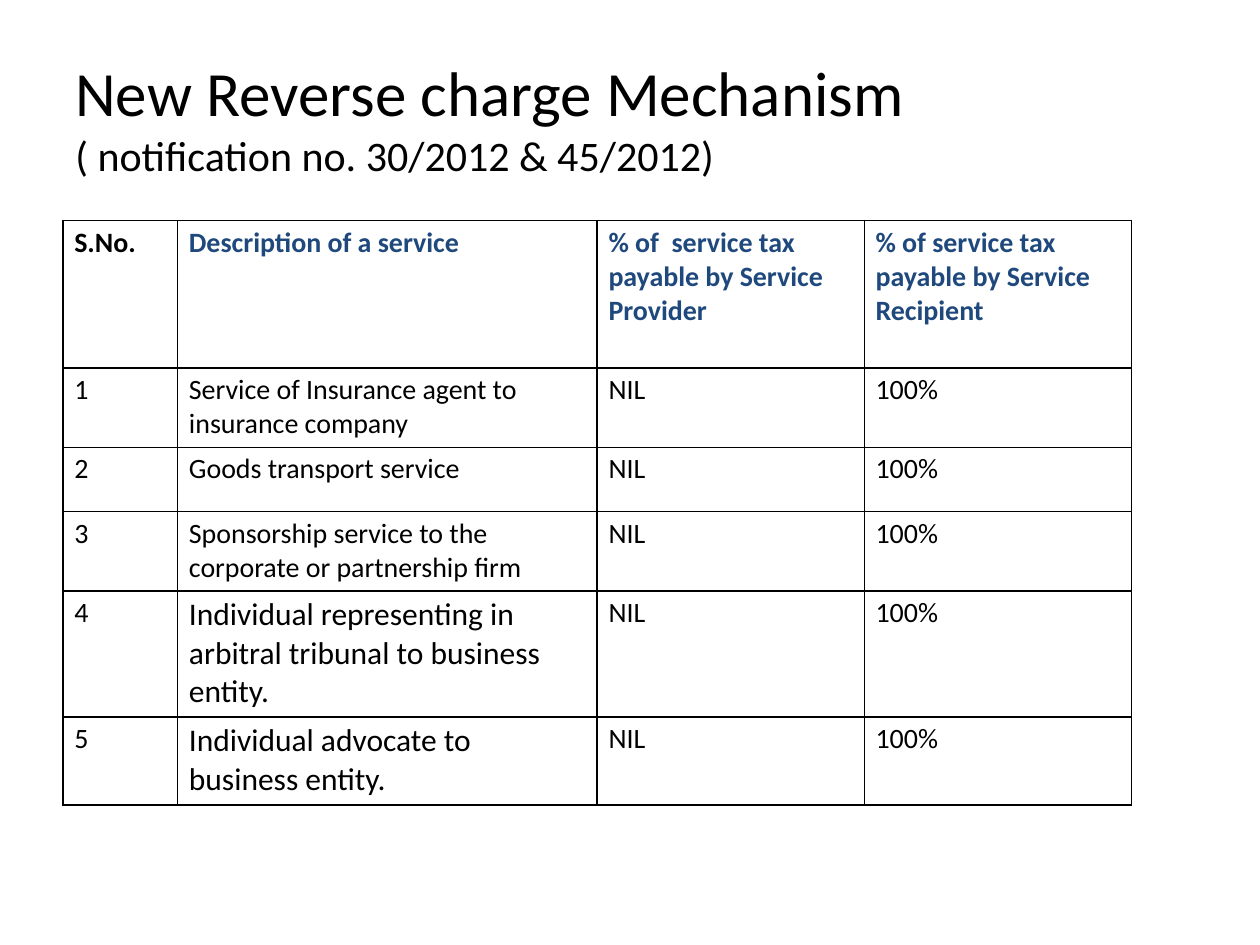
from dataclasses import dataclass

from lxml.etree import SubElement
from pptx import Presentation
from pptx.dml.color import RGBColor
from pptx.enum.text import MSO_ANCHOR as Anchor
from pptx.oxml.ns import qn
from pptx.util import Inches, Pt


@dataclass(frozen=True)
class Theme:
    font: str = "Calibri"
    ink: str = "000000"
    accent: str = "1F497D"
    title: int = 36
    subtitle: int = 24
    body: int = 16
    large: int = 18
    border: float = 1


@dataclass(frozen=True)
class Service:
    description: str
    size: int
    provider: str = "NIL"
    recipient: str = "100%"


THEME = Theme()
HEADERS = (
    "S.No.",
    "Description of a service",
    "% of  service tax payable by Service Provider",
    "% of service tax payable by Service Recipient",
)
SERVICES = (
    Service("Service of Insurance agent to insurance company", THEME.body),
    Service("Goods transport service", THEME.body),
    Service("Sponsorship service to the corporate or partnership firm", THEME.body),
    Service("Individual representing in arbitral tribunal to business entity.", THEME.large),
    Service("Individual advocate to business entity.", THEME.large),
)
COLUMN_WIDTHS = (0.91, 3.33, 2.12, 2.12)
ROW_HEIGHTS = (1.17, 0.63, 0.51, 0.63, 1, 0.7)


def add_text(para, text: str, *, size: int = THEME.body,
             color: str = THEME.ink, bold: bool = False) -> None:
    span = para.add_run()
    span.text = text
    span.font.name = THEME.font
    span.font.size = Pt(size)
    span.font.bold = bold
    span.font.color.rgb = RGBColor.from_string(color)


def add_borders(cell) -> None:
    properties = cell._tc.get_or_add_tcPr()
    for side in ("lnL", "lnR", "lnT", "lnB"):
        line = SubElement(properties, qn(f"a:{side}"), w=str(Pt(THEME.border)))
        fill = SubElement(line, qn("a:solidFill"))
        SubElement(fill, qn("a:srgbClr"), val=THEME.ink)


def fill_cell(cell, text: str, **text_format) -> None:
    add_borders(cell)
    cell.fill.background()
    cell.margin_left = cell.margin_right = Inches(0.09)
    cell.margin_top = cell.margin_bottom = Inches(0.04)
    cell.vertical_anchor = Anchor.TOP
    add_text(cell.text_frame.paragraphs[0], text, **text_format)


def add_title(page) -> None:
    box = page.shapes.add_textbox(Inches(0.5), Inches(0.3), Inches(9), Inches(1.25))
    frame = box.text_frame
    frame.word_wrap = True
    frame.vertical_anchor = Anchor.MIDDLE
    para = frame.paragraphs[0]
    add_text(para, "New Reverse charge Mechanism", size=THEME.title)
    para.add_line_break()
    add_text(para, "( notification no. 30/2012 & 45/2012)", size=THEME.subtitle)


def add_service_table(page) -> None:
    table = page.shapes.add_table(
        len(ROW_HEIGHTS), len(COLUMN_WIDTHS), Inches(0.5), Inches(1.75),
        Inches(sum(COLUMN_WIDTHS)), Inches(sum(ROW_HEIGHTS))).table
    table.first_row = table.horz_banding = False
    for column, width in zip(table.columns, COLUMN_WIDTHS):
        column.width = Inches(width)
    for row, height in zip(table.rows, ROW_HEIGHTS):
        row.height = Inches(height)
    for index, header in enumerate(HEADERS):
        color = THEME.accent if index else THEME.ink
        fill_cell(table.cell(0, index), header, color=color, bold=True)
    for number, service in enumerate(SERVICES, start=1):
        fill_cell(table.cell(number, 0), str(number))
        fill_cell(table.cell(number, 1), service.description, size=service.size)
        fill_cell(table.cell(number, 2), service.provider)
        fill_cell(table.cell(number, 3), service.recipient)


def main() -> None:
    deck = Presentation()
    deck.slide_width, deck.slide_height = Inches(10), Inches(7.5)
    page = deck.slides.add_slide(deck.slide_layouts[6])
    add_title(page)
    add_service_table(page)
    deck.save("out.pptx")


if __name__ == "__main__":
    main()
